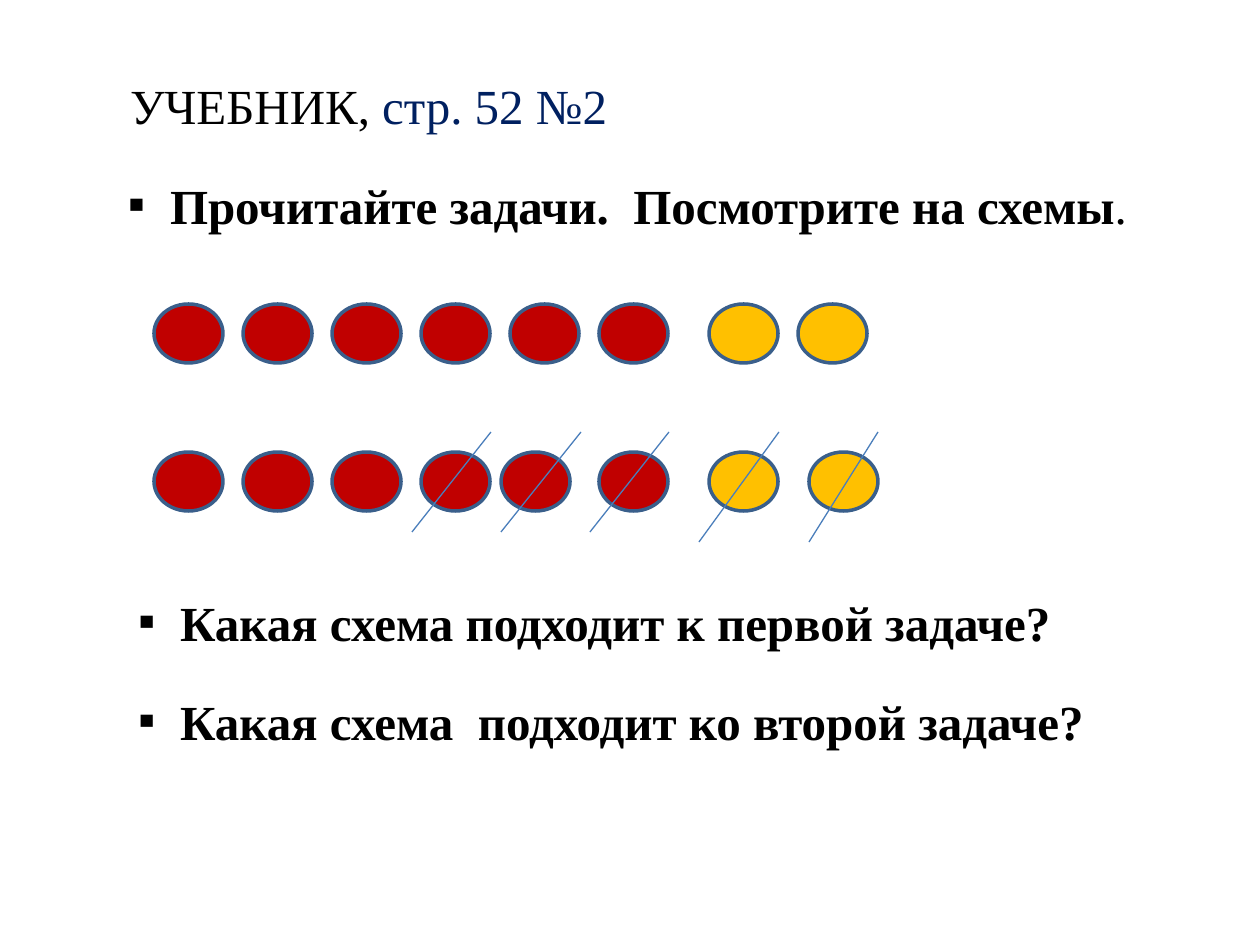
"""Build the textbook task slide with two counter diagrams."""
from dataclasses import dataclass

from lxml import etree
from pptx import Presentation
from pptx.dml.color import RGBColor
from pptx.enum.shapes import MSO_CONNECTOR, MSO_SHAPE
from pptx.enum.text import MSO_ANCHOR, MSO_AUTO_SIZE, PP_ALIGN
from pptx.oxml.ns import qn
from pptx.util import Pt

PX = 914400 / 126
FONT = "Times New Roman"
BLACK = RGBColor(0x00, 0x00, 0x00)
NAVY = RGBColor(0x00, 0x20, 0x60)
RED = RGBColor(0xC0, 0x00, 0x00)
YELLOW = RGBColor(0xFF, 0xC0, 0x00)
OUTLINE = RGBColor(0x3A, 0x5F, 0x8B)
STRIKE = RGBColor(0x4A, 0x7E, 0xBB)
OVAL = MSO_SHAPE.OVAL
STRAIGHT = MSO_CONNECTOR.STRAIGHT
LEFT = PP_ALIGN.LEFT
TOP = MSO_ANCHOR.TOP
NO_FIT = MSO_AUTO_SIZE.NONE

COUNTER_W, COUNTER_H, PITCH = 69, 59, 89
RED_X = [154 + PITCH * i for i in range(6)]
YELLOW_X = [709 + PITCH * i for i in range(2)]
STRIKE_TOP = 432


@dataclass(frozen=True)
class CounterRow:
    top: int
    reds: list[int]
    yellows: list[int]


@dataclass(frozen=True)
class Strike:
    right: int
    left: int
    bottom: int


ROWS = [
    CounterRow(304, RED_X, YELLOW_X),
    CounterRow(452, RED_X[:4] + [501] + RED_X[5:], [709, 809]),
]
STRIKES = [
    Strike(669, 590, 532),
    Strike(581, 501, 532),
    Strike(491, 412, 532),
    Strike(779, 699, 542),
    Strike(878, 809, 542),
]


def emu(px: int) -> int:
    return round(px * PX)


def place(sp, left: int, top: int, width: int, height: int):
    sp.left, sp.top, sp.width, sp.height = map(emu, (left, top, width, height))
    tf = sp.text_frame
    tf.auto_size, tf.word_wrap, tf.vertical_anchor = NO_FIT, True, TOP
    tf.margin_left, tf.margin_right = emu(13), 0
    tf.margin_top = tf.margin_bottom = emu(6)
    return tf


def add_text(p, text: str, *, color: RGBColor = BLACK, bold: bool = False) -> None:
    r = p.add_run()
    r.text = text
    r.font.name, r.font.size, r.font.bold = FONT, Pt(28), bold
    r.font.color.rgb = color


def set_bullet(p, before: int = 0) -> None:
    p.alignment, p.space_before = LEFT, Pt(before)
    pPr = p._p.get_or_add_pPr()
    pPr.set("marL", str(emu(42)))
    pPr.set("indent", str(emu(-42)))
    etree.SubElement(pPr, qn("a:buFont")).set("typeface", FONT)
    etree.SubElement(pPr, qn("a:buChar")).set("char", "▪")


def add_counter(s, left: int, top: int, color: RGBColor) -> None:
    sp = s.shapes.add_shape(OVAL, emu(left), emu(top), emu(COUNTER_W), emu(COUNTER_H))
    sp.shadow.inherit = False
    sp.fill.solid()
    sp.fill.fore_color.rgb = color
    sp.line.color.rgb = OUTLINE
    sp.line.width = Pt(2)


def add_strike(s, strike: Strike) -> None:
    line = s.shapes.add_connector(
        STRAIGHT, emu(strike.right), emu(STRIKE_TOP), emu(strike.left), emu(strike.bottom)
    )
    line.line.color.rgb = STRIKE
    line.line.width = Pt(0.75)
    etree.SubElement(line._element.spPr, qn("a:effectLst"))


def main() -> None:
    prs = Presentation()
    prs.slide_width, prs.slide_height = emu(1260), emu(945)
    s = prs.slides.add_slide(prs.slide_layouts[3])
    title, task, questions = s.placeholders

    p = place(title, 117, 69, 503, 72).paragraphs[0]
    p.alignment = LEFT
    add_text(p, "УЧЕБНИК, ")
    add_text(p, "стр. 52 №2", color=NAVY)

    p = place(task, 115, 169, 1026, 72).paragraphs[0]
    set_bullet(p)
    add_text(p, "Прочитайте задачи.  Посмотрите на схемы", bold=True)
    add_text(p, ".")

    for row in ROWS:
        for left in row.reds:
            add_counter(s, left, row.top, RED)
        for left in row.yellows:
            add_counter(s, left, row.top, YELLOW)
    for strike in STRIKES:
        add_strike(s, strike)

    tf = place(questions, 125, 586, 971, 189)
    p = tf.paragraphs[0]
    set_bullet(p)
    add_text(p, "Какая схема подходит к первой задаче?", bold=True)
    p = tf.add_paragraph()
    set_bullet(p, before=23)
    add_text(p, "Какая схема  подходит ко второй задаче?", bold=True)

    prs.save("out.pptx")


if __name__ == "__main__":
    main()
